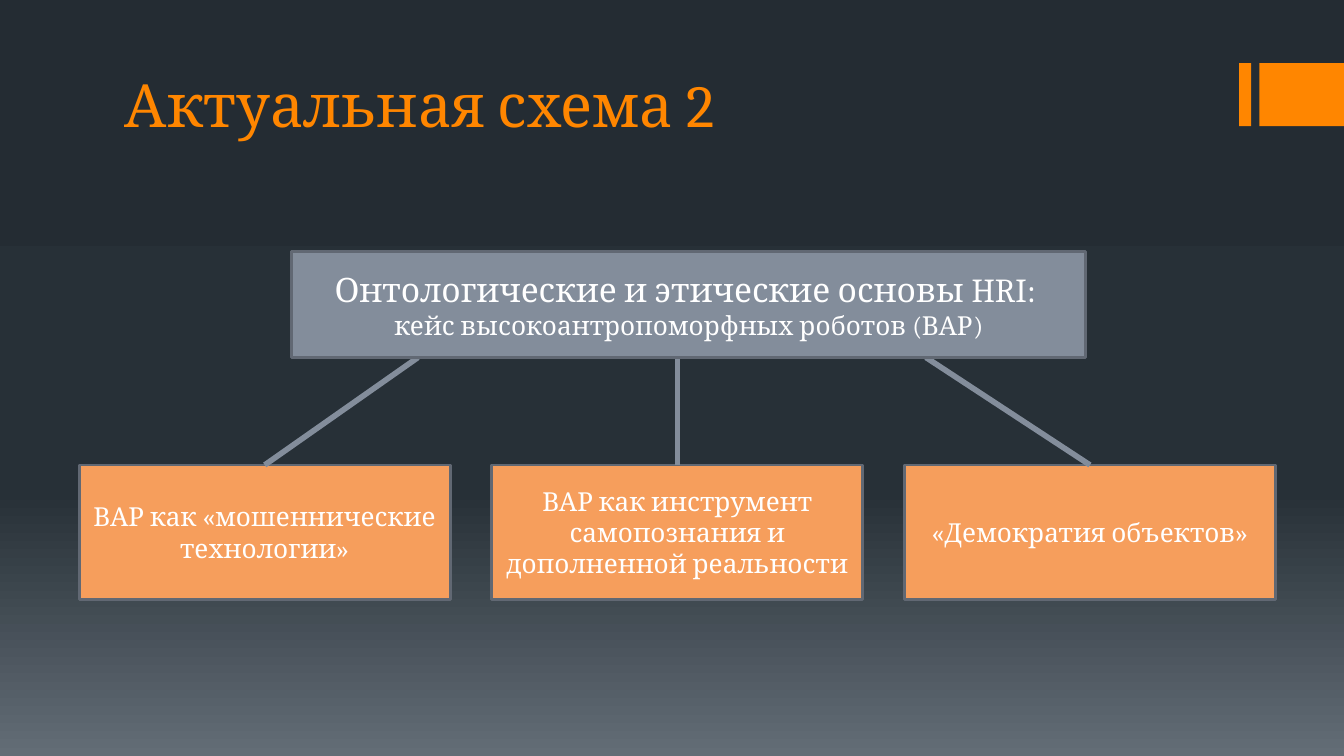
from copy import deepcopy

from pptx import Presentation
from pptx.dml.color import RGBColor
from pptx.enum.shapes import MSO_CONNECTOR, MSO_SHAPE
from pptx.enum.text import MSO_ANCHOR, MSO_AUTO_SIZE, PP_ALIGN
from pptx.oxml.ns import qn
from pptx.util import Inches, Pt

ORANGE = RGBColor(0xFF, 0x86, 0x00)
PEACH = RGBColor(0xF6, 0x9E, 0x5C)
STEEL = RGBColor(0x83, 0x8D, 0x9B)
OUTLINE = RGBColor(0x61, 0x68, 0x73)
WHITE = RGBColor(0xFF, 0xFF, 0xFF)
BACKDROP = [
    (0, RGBColor(0x24, 0x2C, 0x33)),
    (0.65, RGBColor(0x27, 0x30, 0x37)),
    (1, RGBColor(0x63, 0x6D, 0x76)),
]
FONT = "Cambria"

HEADING = "Актуальная схема 2"
TOPIC = [
    ("Онтологические и этические основы HRI: ", 18),
    ("кейс высокоантропоморфных роботов (ВАР)", 14),
]
BRANCHES = [
    ("ВАР как «мошеннические технологии»", (3.11, 2.66)),
    ("ВАР как инструмент самопознания и дополненной реальности", (5.04, 2.34)),
    ("«Демократия объектов»", (6.89, 2.66)),
]
ACCENTS = [(9.22, 0.09), (9.37, 0.63)]

SLIDE_WIDTH = Inches(10)
SLIDE_HEIGHT = SLIDE_WIDTH * 9 // 16
BRANCH_LEFT, BRANCH_TOP, BRANCH_STEP = 0.59, 3.46, 3.07
BRANCH_WIDTH, BRANCH_HEIGHT = 2.76, 1


def style_run(run, size, color):
    run.font.name = FONT
    run.font.size = Pt(size)
    run.font.color.rgb = color


def add_block(shapes, left, top, width, height, fill, lines=()):
    block = shapes.add_shape(
        MSO_SHAPE.RECTANGLE, Inches(left), Inches(top), Inches(width), Inches(height)
    )
    block.shadow.inherit = False
    block.fill.solid()
    block.fill.fore_color.rgb = fill
    if not lines:
        block.line.fill.background()
        return block
    block.line.color.rgb = OUTLINE
    block.line.width = Pt(1.5)
    frame = block.text_frame
    frame.word_wrap = True
    frame.vertical_anchor = MSO_ANCHOR.MIDDLE
    frame.text = "\n".join(text for text, _ in lines)
    for paragraph, (_, size) in zip(frame.paragraphs, lines):
        paragraph.alignment = PP_ALIGN.CENTER
        style_run(paragraph.runs[0], size, WHITE)
    return block


def add_link(shapes, start, branch):
    x, y = (Inches(value) for value in start)
    link = shapes.add_connector(MSO_CONNECTOR.STRAIGHT, x, y, x, y)
    link.end_connect(branch, 0)
    link.line.color.rgb = STEEL
    link.line.width = Pt(3)
    properties = link._element.spPr
    properties.append(properties.makeelement(qn("a:effectLst"), {}))


def paint_backdrop(slide):
    fill = slide.background.fill
    fill.gradient()
    fill.gradient_angle = 270
    stop_list = slide._element.find(".//" + qn("a:gsLst"))
    stop_list.append(deepcopy(stop_list[-1]))
    for stop, (position, color) in zip(fill.gradient_stops, BACKDROP):
        stop.position = position
        stop.color.rgb = color


def place_heading(title):
    title.left, title.top = Inches(0.83), Inches(0.14)
    title.width, title.height = Inches(8), Inches(0.95)
    frame = title.text_frame
    frame.text = HEADING
    frame.word_wrap = True
    frame.auto_size = MSO_AUTO_SIZE.NONE
    frame.vertical_anchor = MSO_ANCHOR.BOTTOM
    frame.paragraphs[0].alignment = PP_ALIGN.LEFT
    style_run(frame.paragraphs[0].runs[0], 32, ORANGE)


def main():
    deck = Presentation()
    deck.slide_width, deck.slide_height = SLIDE_WIDTH, SLIDE_HEIGHT
    slide = deck.slides.add_slide(deck.slide_layouts[5])
    shapes = slide.shapes
    paint_backdrop(slide)
    place_heading(shapes.title)
    for left, width in ACCENTS:
        add_block(shapes, left, 0.47, width, 0.47, ORANGE)
    for column, (text, start) in enumerate(BRANCHES):
        left = BRANCH_LEFT + column * BRANCH_STEP
        branch = add_block(
            shapes, left, BRANCH_TOP, BRANCH_WIDTH, BRANCH_HEIGHT, PEACH, [(text, 14)]
        )
        add_link(shapes, start, branch)
    add_block(shapes, 2.17, 1.87, 5.91, 0.79, STEEL, TOPIC)
    deck.save("out.pptx")


if __name__ == "__main__":
    main()
